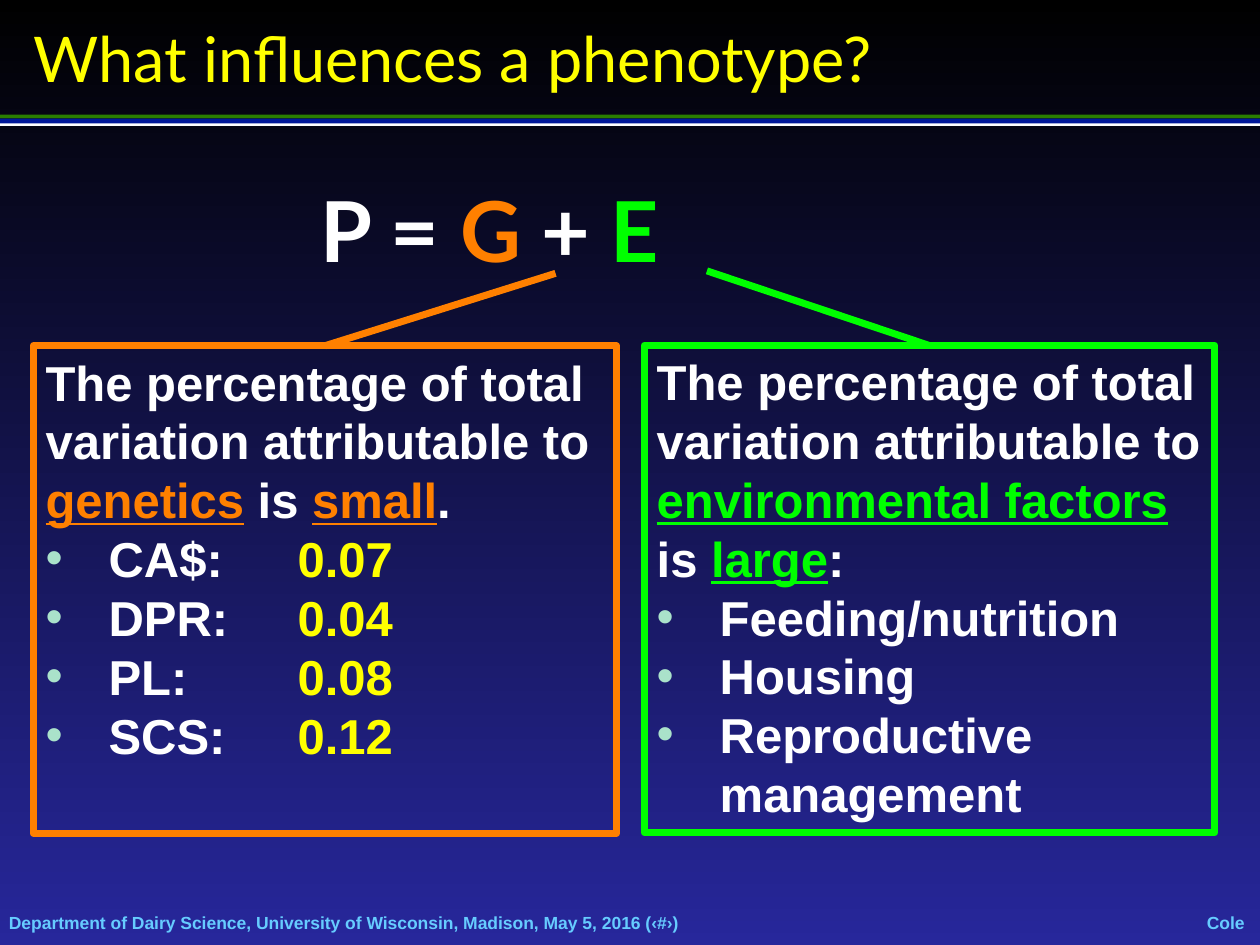
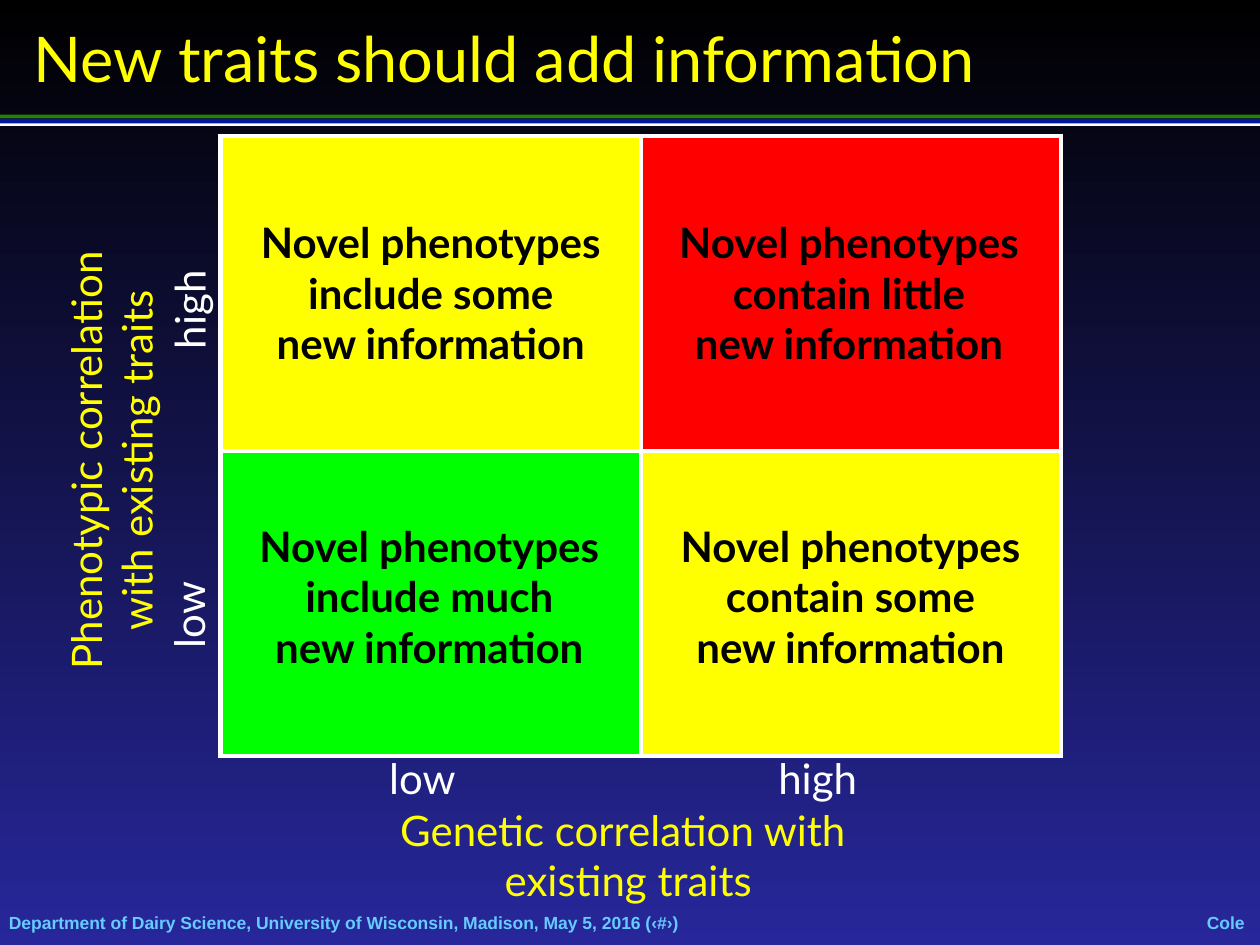
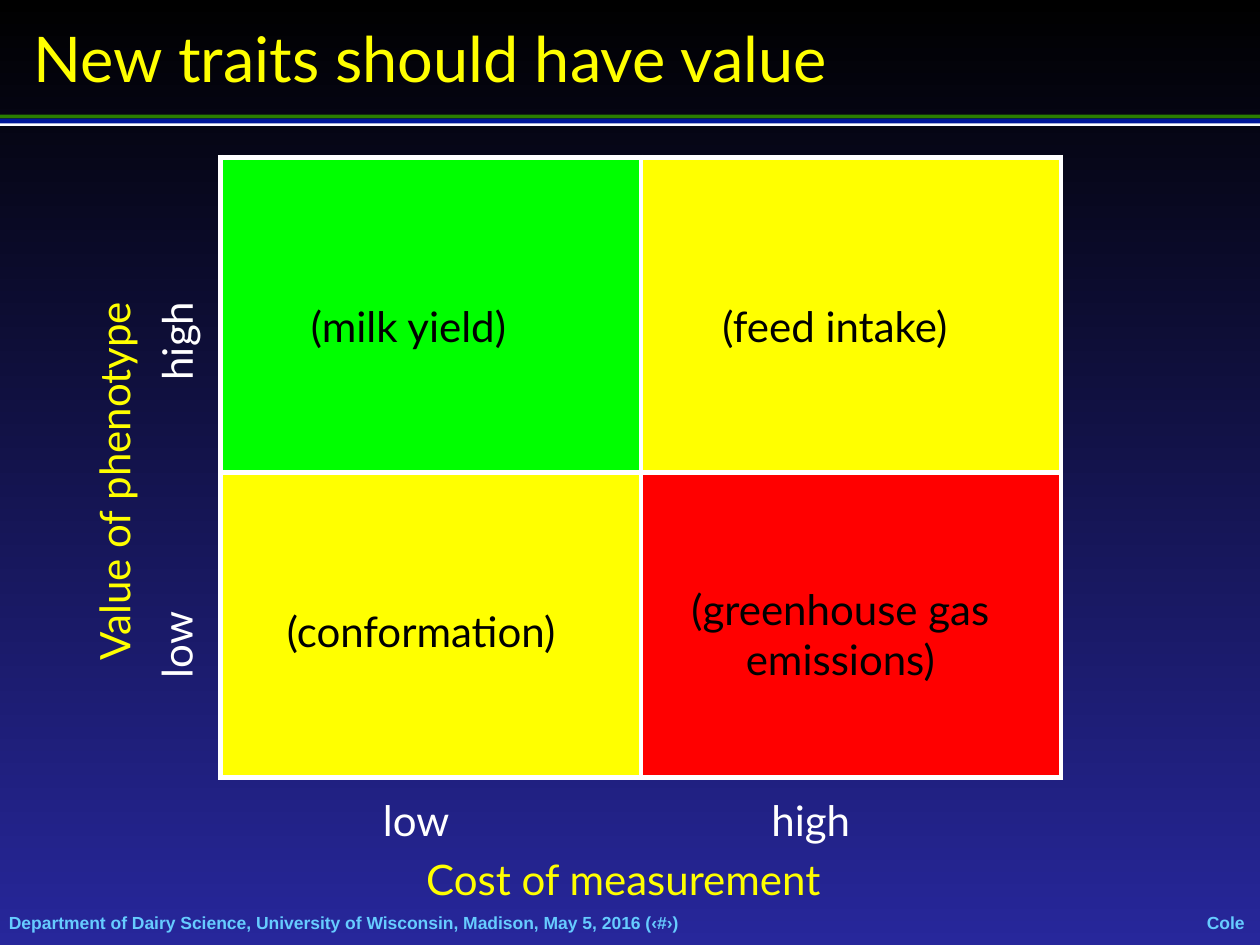
from lxml import etree
from pptx import Presentation
from pptx.dml.color import RGBColor as RGB
from pptx.enum.shapes import MSO_CONNECTOR as CONN, MSO_SHAPE as SHAPE
from pptx.enum.text import MSO_ANCHOR as ANCHOR, PP_ALIGN as ALIGN
from pptx.oxml.ns import qn
from pptx.util import Cm, Pt

C = {"black": "000000", "navy": "27279B", "white": "FFFFFF", "yellow": "FFFF00",
     "orange": "FF8000", "green": "00FF00", "red": "FF0000", "sky": "66CCFF",
     "mint": "AAE2CA", "band_green": "2A7E00", "band_blue": "001799"}
C = {name: RGB.from_string(value) for name, value in C.items()}

TITLE = {"name": "Lato", "size": Pt(36)}
FORMULA = {"name": "Lato", "size": Pt(48), "bold": True}
LABEL = {"name": "Lato", "size": Pt(24)}
BODY = {"name": "Arial", "size": Pt(28), "bold": True}
FOOTER = {"name": "Arial", "size": Pt(10), "bold": True}


def write(s, box, lines, font, inset=(0.25, 0.13), wrap=True, align=ALIGN.LEFT,
          anchor=ANCHOR.TOP, sp=None):
    """Fill sp, or a new text box, with lines of (text, colour, underlined) runs."""
    sp = sp or s.shapes.add_textbox(*map(Cm, box))
    tf = sp.text_frame
    tf.word_wrap, tf.vertical_anchor = wrap, anchor
    tf.margin_left = tf.margin_right = Cm(inset[0])
    tf.margin_top = tf.margin_bottom = Cm(inset[1])
    for i, runs in enumerate(lines):
        p = tf.paragraphs[0] if i == 0 else tf.add_paragraph()
        p.alignment = align
        for text, color, *underline in runs:
            r = p.add_run()
            r.text = text
            for key, value in font.items():
                setattr(r.font, key, value)
            r.font.color.rgb = C[color]
            r.font.underline = bool(underline)
    return sp


def start_slide(title):
    """Add a slide with the footers, bands and title that all slides share."""
    s = prs.slides.add_slide(prs.slide_layouts[6])
    footer = "Department of Dairy Science, University of Wisconsin, Madison, May 5, 2016 (‹#›)"
    for text, box, wrap, align in [
            (footer, (0.18, 18.39, 20.55, 0.43), True, ALIGN.LEFT),
            ("Cole", (24.21, 18.39, 1, 0.43), False, ALIGN.CENTER)]:
        sp = write(s, box, [[(text, "sky")]], FOOTER, (0, 0), wrap, align, ANCHOR.MIDDLE)
        sp.text_frame.paragraphs[0].space_before = Pt(6.2)
    for color, top, height in [("band_green", 2.31, 0.08), ("white", 2.46, 0.08),
                               ("band_blue", 2.39, 0.1)]:
        band = s.shapes.add_shape(SHAPE.RECTANGLE, 0, Cm(top), prs.slide_width, Cm(height))
        band.shadow.inherit = False
        band.fill.solid()
        band.fill.fore_color.rgb = C[color]
        band.line.fill.background()
    write(s, (0.43, 0.26, 24.54, 1.78), [[(title, "yellow")]], TITLE, anchor=ANCHOR.MIDDLE)
    return s


prs = Presentation()
prs.slide_width, prs.slide_height = Cm(25.4), Cm(19.05)
bg = prs.slide_master.background.fill
bg.gradient()
bg.gradient_angle = 270
for stop, color in zip(bg.gradient_stops, ("black", "navy")):
    stop.color.rgb = C[color]

# Slide 1: formula with a box for each term
s = start_slide("What influences a phenotype?")
formula = [("P = ", "white"), ("G", "orange"), (" + ", "white"), ("E", "green")]
sp = write(s, (1.27, 3.46, 22.66, 2.39), [formula], FORMULA)
p = sp.text_frame.paragraphs[0]
p.space_before, p.space_after = Pt(15.9), Pt(14.4)
p._p.get_or_add_pPr().set("marL", str(Cm(4.95)))

intro = ("The percentage of total variation attributable to ", "white")
traits = [("CA$:\t\t", "0.07"), ("DPR:\t\t", "0.04"), ("PL:\t\t", "0.08"), ("SCS: \t", "0.12")]
genetics = [[intro, ("genetics", "orange", True), (" is ", "white"),
             ("small", "orange", True), (".", "white")]]
genetics += [[(trait, "white"), (value, "yellow")] for trait, value in traits]
environment = [[intro, ("environmental factors ", "green", True), ("is ", "white"),
                ("large", "green", True), (":", "white")]]
environment += [[(factor, "white")] for factor in
                ("Feeding/nutrition", "Housing", "Reproductive management")]

for color, box, lines, ends in [
        ("orange", (0.67, 6.97, 11.76, 9.83), genetics, (11.2, 5.51, 6.55, 6.97)),
        ("green", (12.99, 6.96, 11.5, 9.83), environment, (14.25, 5.46, 18.72, 6.96))]:
    sp = s.shapes.add_shape(SHAPE.RECTANGLE, *map(Cm, box))
    sp.shadow.inherit = False
    sp.fill.background()
    write(s, box, lines, BODY, sp=sp)
    for p in sp.text_frame.paragraphs[1:]:
        pPr = p._p.get_or_add_pPr()
        for key, value in {"marL": 1.27, "indent": -1.27, "defTabSz": 1.27}.items():
            pPr.set(key, str(Cm(value)))
        bullet_color = etree.SubElement(pPr, qn("a:buClr"))
        etree.SubElement(bullet_color, qn("a:srgbClr"), val=str(C["mint"]))
        etree.SubElement(pPr, qn("a:buFont"), typeface="Arial")
        etree.SubElement(pPr, qn("a:buChar"), char="•")
    line = s.shapes.add_connector(CONN.STRAIGHT, *map(Cm, ends))
    etree.SubElement(line._element.spPr, qn("a:effectLst"))
    for outline in (sp.line, line.line):
        outline.color.rgb = C[color]
        outline.width = Pt(4)

# Slides 2 and 3: two-by-two grids; labels are (lines, left, top, width)
grids = [
    {"title": "New traits should add information", "top": 2.74, "inset": 0.25, "bold": True,
     "fills": ["yellow", "red", "green", "yellow"],
     "levels": [("low", 7.59, 15.04, 1.85), ("high", 15.42, 15.04, 2.13)],
     "side_levels": [("low", 2.87, 11.76, 1.85), ("high", 2.74, 5.61, 2.13)],
     "axis": ("Genetic correlation with \nexisting traits", 7.57, 16.08, 10.19),
     "side_axis": ("Phenotypic correlation\nwith existing traits", -2.36, 8.13, 9.19),
     "cells": [("Novel phenotypes\ninclude some\nnew information", 4.75, 4.24, 7.87),
               ("Novel phenotypes\ncontain little\nnew information", 13.18, 4.24, 7.87),
               ("Novel phenotypes\ninclude much\nnew information", 4.72, 10.36, 7.87),
               ("Novel phenotypes\ncontain some\nnew information", 13.21, 10.36, 7.87)]},
    {"title": "New traits should have value", "top": 3.17, "inset": 0.13, "bold": False,
     "fills": ["green", "yellow", "yellow", "red"],
     "levels": [("low", 7.59, 15.88, 1.6), ("high", 15.42, 15.88, 1.85)],
     "side_levels": [("low", 2.74, 12.37, 1.6), ("high", 2.62, 6.24, 1.85)],
     "axis": ("Cost of measurement", 8.35, 17.07, 8.43),
     "side_axis": ("Value of phenotype", -1.55, 9.07, 7.67),
     "cells": [("(milk yield)", 5.91, 5.92, 4.65),
               ("(feed intake)", 14.19, 5.92, 5.28),
               ("(conformation)", 5.48, 12.07, 6.02),
               ("(greenhouse gas\nemissions)", 13.6, 11.63, 6.68)]},
]
for grid in grids:
    s = start_slide(grid["title"])
    table = s.shapes.add_table(2, 2, Cm(4.45), Cm(grid["top"]), Cm(16.94), Cm(12.5)).table
    for row, height in zip(table.rows, (6.35, 6.15)):
        row.height = Cm(height)
    for cell, color in zip(table.iter_cells(), grid["fills"]):
        tcPr = cell._tc.get_or_add_tcPr()
        for side in ("lnL", "lnR", "lnT", "lnB"):
            border = etree.SubElement(tcPr, qn("a:" + side), w=str(Pt(3)))
            fill = etree.SubElement(border, qn("a:solidFill"))
            etree.SubElement(fill, qn("a:srgbClr"), val=str(C["white"]))
        cell.fill.solid()
        cell.fill.fore_color.rgb = C[color]

    for labels, color, bold, rotation in [
            (grid["levels"], "white", False, 0),
            (grid["side_levels"], "white", False, 270),
            ([grid["axis"]], "yellow", False, 0),
            ([grid["side_axis"]], "yellow", False, 270),
            (grid["cells"], "black", grid["bold"], 0)]:
        for text, left, top, width in labels:
            lines = [[(line, color)] for line in text.split("\n")]
            box = (left, top, width, 0.24 + 1.03 * len(lines))
            sp = write(s, box, lines, LABEL | {"bold": bold}, (grid["inset"], 0.13),
                       False, ALIGN.CENTER)
            sp.rotation = rotation

prs.save("out.pptx")
